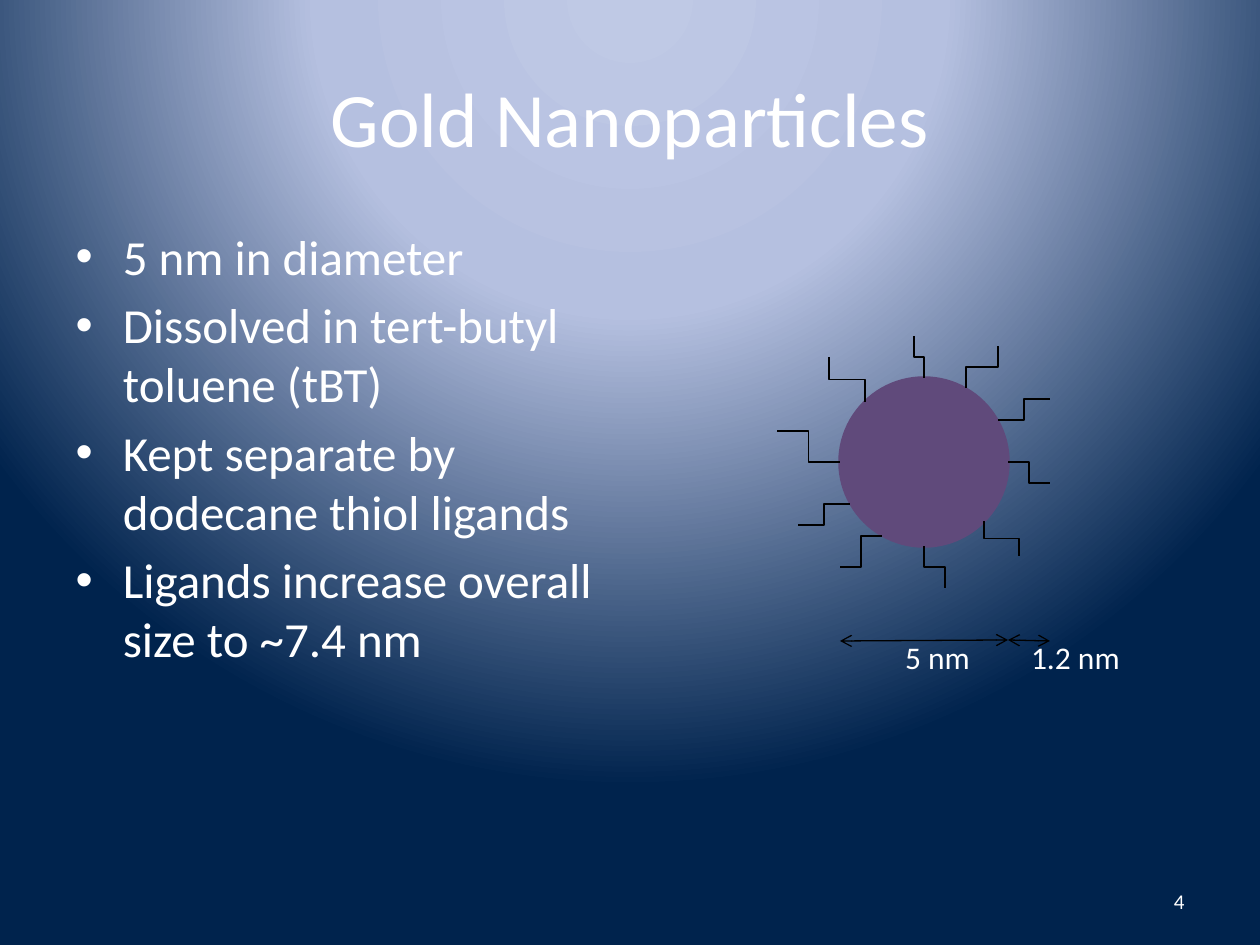
from pptx import Presentation
from pptx.dml.color import RGBColor
from pptx.enum.shapes import MSO_CONNECTOR as Connector, MSO_SHAPE as Shape
from pptx.enum.text import MSO_ANCHOR as Anchor, PP_ALIGN as Align
from pptx.oxml import parse_xml
from pptx.oxml.ns import nsdecls, qn
from pptx.util import Pt

EMU_PER_PX = 914400 / 126
WHITE, BLACK, PURPLE = "FFFFFF", "000000", "604A7B"
GRADIENT = [(0, "BFC9E5"), (40, "B5C0E0"), (100, "00234D")]
BULLETS = [
    "5 nm in diameter",
    "Dissolved in tert-butyl toluene (tBT)",
    "Kept separate by dodecane thiol ligands",
    "Ligands increase overall size to ~7.4 nm",
]
# Start on the particle, then free end
SIDE_LIGANDS = [
    ((998, 420), (1050, 399)),
    ((1008, 462), (1050, 483)),
    ((840, 462), (777, 431)),
    ((850, 504), (798, 525)),
    ((882, 536), (840, 567)),
]
UPRIGHT_LIGANDS = [
    ((966, 388), (998, 346)),
    ((984, 521), (1019, 556)),
    ((924, 378), (914, 336)),
    ((865, 402), (829, 357)),
    ((924, 546), (945, 588)),
]


def px(length):
    return round(length * EMU_PER_PX)


def color(hex_value):
    return RGBColor.from_string(hex_value)


def place(shape, left, top, width, height):
    shape.left, shape.top = px(left), px(top)
    shape.width, shape.height = px(width), px(height)


def write(shape, *lines, size, align=None, anchor=None):
    frame = shape.text_frame
    frame.word_wrap = True
    if anchor is not None:
        frame.vertical_anchor = anchor
    for index, line in enumerate(lines):
        paragraph = frame.add_paragraph() if index else frame.paragraphs[0]
        paragraph.alignment = align
        run = paragraph.add_run()
        run.text = line
        run.font.name, run.font.size = "Calibri", Pt(size)
        run.font.color.rgb = color(WHITE)


def set_radial_background(slide):
    slide.background.fill.solid()
    properties = slide.background._cSld.bg.bgPr
    stops = "".join(
        f'<a:gs pos="{position * 1000}"><a:srgbClr val="{value}"/></a:gs>'
        for position, value in GRADIENT
    )
    properties.replace(properties[0], parse_xml(
        f'<a:gradFill {nsdecls("a")} rotWithShape="1"><a:gsLst>{stops}</a:gsLst>'
        '<a:path path="circle"><a:fillToRect l="50000" t="-80000" r="50000" b="180000"/>'
        "</a:path></a:gradFill>"
    ))


def add_line(slide, kind, start, end):
    connector = slide.shapes.add_connector(kind, *map(px, start + end))
    connector.line.color.rgb = color(BLACK)
    connector.line.width = Pt(0.75)
    connector._element.spPr.append(parse_xml(f'<a:effectLst {nsdecls("a")}/>'))
    return connector


def add_upright_elbow(slide, start, end):
    """Add an elbow that leaves vertically: a sideways one turned by 270 degrees."""
    (x1, y1), (x2, y2) = start, end
    center_x, center_y = (x1 + x2) / 2, (y1 + y2) / 2
    half_x, half_y = (y1 - y2) / 2, (x2 - x1) / 2
    elbow = add_line(slide, Connector.ELBOW,
                     (center_x - half_x, center_y - half_y),
                     (center_x + half_x, center_y + half_y))
    elbow._element.spPr.find(qn("a:xfrm")).set("rot", str(270 * 60000))


def add_dimension(slide, start, end):
    dimension = add_line(slide, Connector.STRAIGHT, start, end)
    line = dimension.line._get_or_add_ln()
    for tag in ("headEnd", "tailEnd"):
        line.append(parse_xml(f'<a:{tag} {nsdecls("a")} type="arrow"/>'))


def add_dimension_labels(placeholder):
    """Write both labels on one line, under the arrows, parted by a tab stop."""
    frame = placeholder.text_frame
    frame.margin_left, frame.margin_top = px(265), px(418)
    write(placeholder, "5 nm\t1.2 nm", size=18)
    paragraph = frame.paragraphs[0]
    paragraph.space_before = Pt(0)
    properties = paragraph._p.get_or_add_pPr()
    properties.set("marL", "0")
    properties.set("indent", "0")
    for content in ("<a:buNone {}/>",
                    f'<a:tabLst {{}}><a:tab pos="{px(108)}" algn="l"/></a:tabLst>'):
        properties.append(parse_xml(content.format(nsdecls("a"))))


def add_particle(slide):
    particle = slide.shapes.add_shape(Shape.OVAL, *map(px, (840, 378, 168, 168)))
    particle.shadow.inherit = False
    particle.fill.solid()
    particle.fill.fore_color.rgb = color(PURPLE)
    particle.line.color.rgb = color(PURPLE)
    particle.line.width = Pt(2)
    for start, end in SIDE_LIGANDS:
        add_line(slide, Connector.ELBOW, start, end)
    for start, end in UPRIGHT_LIGANDS:
        add_upright_elbow(slide, start, end)


def main():
    presentation = Presentation()
    presentation.slide_width, presentation.slide_height = px(1260), px(945)
    slide = presentation.slides.add_slide(
        presentation.slide_layouts.get_by_name("Two Content"))
    set_radial_background(slide)

    title, bullets, labels = slide.placeholders
    place(title, 63, 38, 1134, 157)
    write(title, "Gold Nanoparticles", size=44, align=Align.CENTER, anchor=Anchor.MIDDLE)
    place(bullets, 63, 220, 557, 624)
    write(bullets, *BULLETS, size=28)
    place(labels, 640, 220, 557, 624)
    add_dimension_labels(labels)

    page_number = slide.shapes.add_textbox(*map(px, (903, 876, 294, 50)))
    write(page_number, "4", size=12, align=Align.RIGHT, anchor=Anchor.MIDDLE)

    add_particle(slide)
    add_dimension(slide, (840, 641), (1008, 640))
    add_dimension(slide, (1008, 640), (1050, 641))
    presentation.save("out.pptx")


if __name__ == "__main__":
    main()
